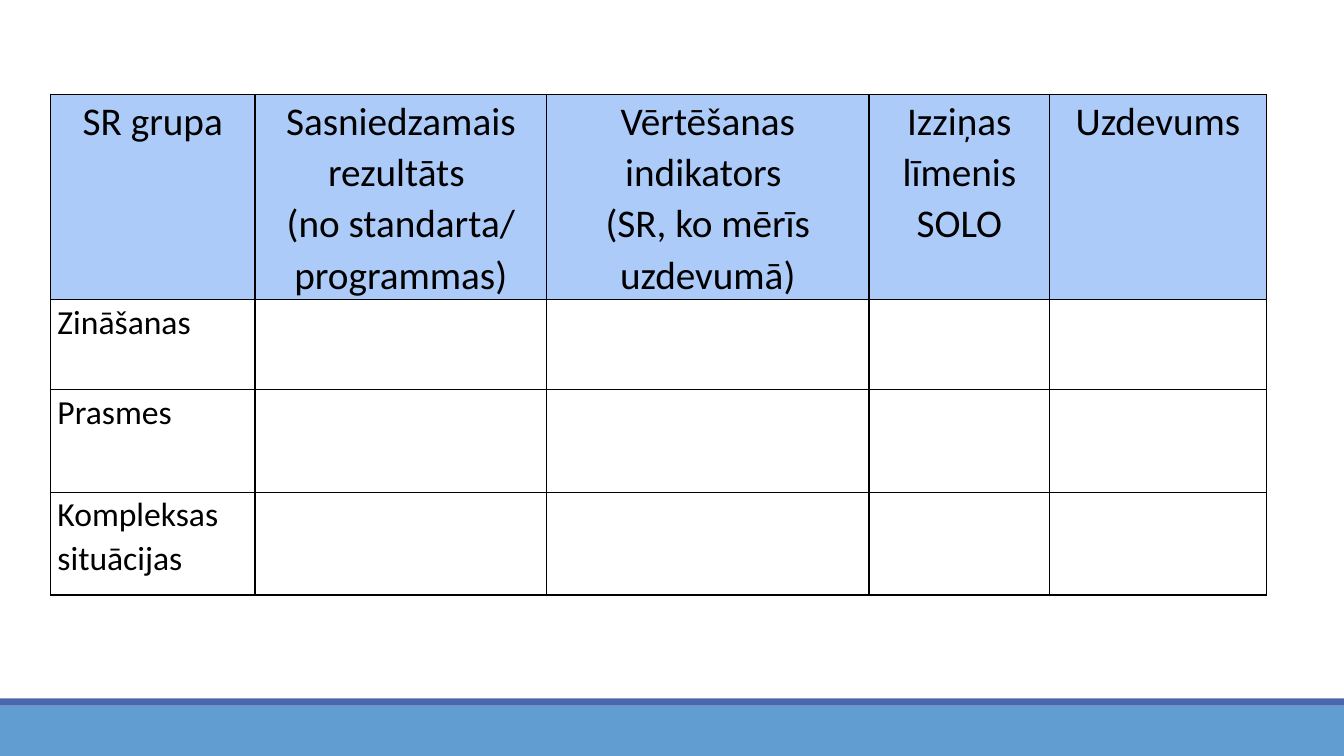
from typing import NamedTuple

from lxml.etree import SubElement
from pptx import Presentation
from pptx.dml.color import RGBColor as Rgb
from pptx.enum.shapes import MSO_SHAPE as Kind
from pptx.enum.text import PP_ALIGN as Align
from pptx.oxml.ns import qn
from pptx.util import Inches, Pt

COLORS = {
    "band": "629DD1",
    "stripe": "4A66AC",
    "head": "ACCBF9",
    "ink": "000000",
}


class Bar(NamedTuple):
    top: float
    height: float
    color: str


class Column(NamedTuple):
    width: float
    lines: list[str]


class Row(NamedTuple):
    height: float
    label: str


BARS = [Bar(7, 0.5, "band"), Bar(6.93, 0.07, "stripe")]
COLUMNS = [
    Column(2.03, ["SR grupa"]),
    Column(2.89, ["Sasniedzamais rezultāts ", "(no standarta/ programmas)"]),
    Column(3.2, ["Vērtēšanas indikators ", "(SR, ko mērīs uzdevumā)"]),
    Column(1.79, ["Izziņas līmenis SOLO"]),
    Column(2.15, ["Uzdevums"]),
]
ROWS = [
    Row(0.89, "Zināšanas"),
    Row(1.02, "Prasmes"),
    Row(1.02, "Kompleksas situācijas"),
]
HEAD = 2.03


def paint(fill, color: str) -> None:
    fill.solid()
    fill.fore_color.rgb = Rgb.from_string(COLORS[color])


def draw_bar(slide, bar: Bar, width: int) -> None:
    shape = slide.shapes.add_shape(
        Kind.RECTANGLE, 0, Inches(bar.top), width, Inches(bar.height)
    )
    shape.shadow.inherit = False
    paint(shape.fill, bar.color)
    shape.line.fill.background()


def add_border(cell) -> None:
    props = cell._tc.get_or_add_tcPr()
    for index, side in enumerate(("lnL", "lnR", "lnT", "lnB")):
        line = SubElement(props, qn(f"a:{side}"), w=str(Pt(1)))
        fill = SubElement(line, qn("a:solidFill"))
        SubElement(fill, qn("a:srgbClr"), val=COLORS["ink"])
        props.insert(index, line)


def style_cell(cell) -> None:
    cell.margin_left = cell.margin_right = Inches(0.07)
    cell.margin_top = cell.margin_bottom = 0
    cell.fill.background()
    add_border(cell)


def write(cell, lines: list[str], size: int, align: Align, after: int) -> None:
    frame = cell.text_frame
    for index, text in enumerate(lines):
        para = frame.add_paragraph() if index else frame.paragraphs[0]
        para.alignment = align
        para.line_spacing = 1.07
        para.space_after = Pt(after)
        run = para.add_run()
        run.text = text
        run.font.name = "Calibri"
        run.font.size = Pt(size)
        run.font.color.rgb = Rgb.from_string(COLORS["ink"])


def draw_table(slide) -> None:
    width = sum(column.width for column in COLUMNS)
    height = HEAD + sum(row.height for row in ROWS)
    table = slide.shapes.add_table(
        len(ROWS) + 1, len(COLUMNS),
        Inches(0.5), Inches(0.94), Inches(width), Inches(height),
    ).table
    table.first_row = table.horz_banding = False
    for cell in table.iter_cells():
        style_cell(cell)
    table.rows[0].height = Inches(HEAD)
    for index, column in enumerate(COLUMNS):
        table.columns[index].width = Inches(column.width)
        cell = table.cell(0, index)
        paint(cell.fill, "head")
        write(cell, column.lines, 28, Align.CENTER, 0)
    for index, row in enumerate(ROWS, 1):
        table.rows[index].height = Inches(row.height)
        write(table.cell(index, 0), [row.label], 24, Align.JUSTIFY, 8)


def main() -> None:
    deck = Presentation()
    deck.slide_width = Inches(13.33)
    deck.slide_height = Inches(7.5)
    slide = deck.slides.add_slide(deck.slide_layouts[6])
    for bar in BARS:
        draw_bar(slide, bar, deck.slide_width)
    draw_table(slide)
    deck.save("out.pptx")


if __name__ == "__main__":
    main()
